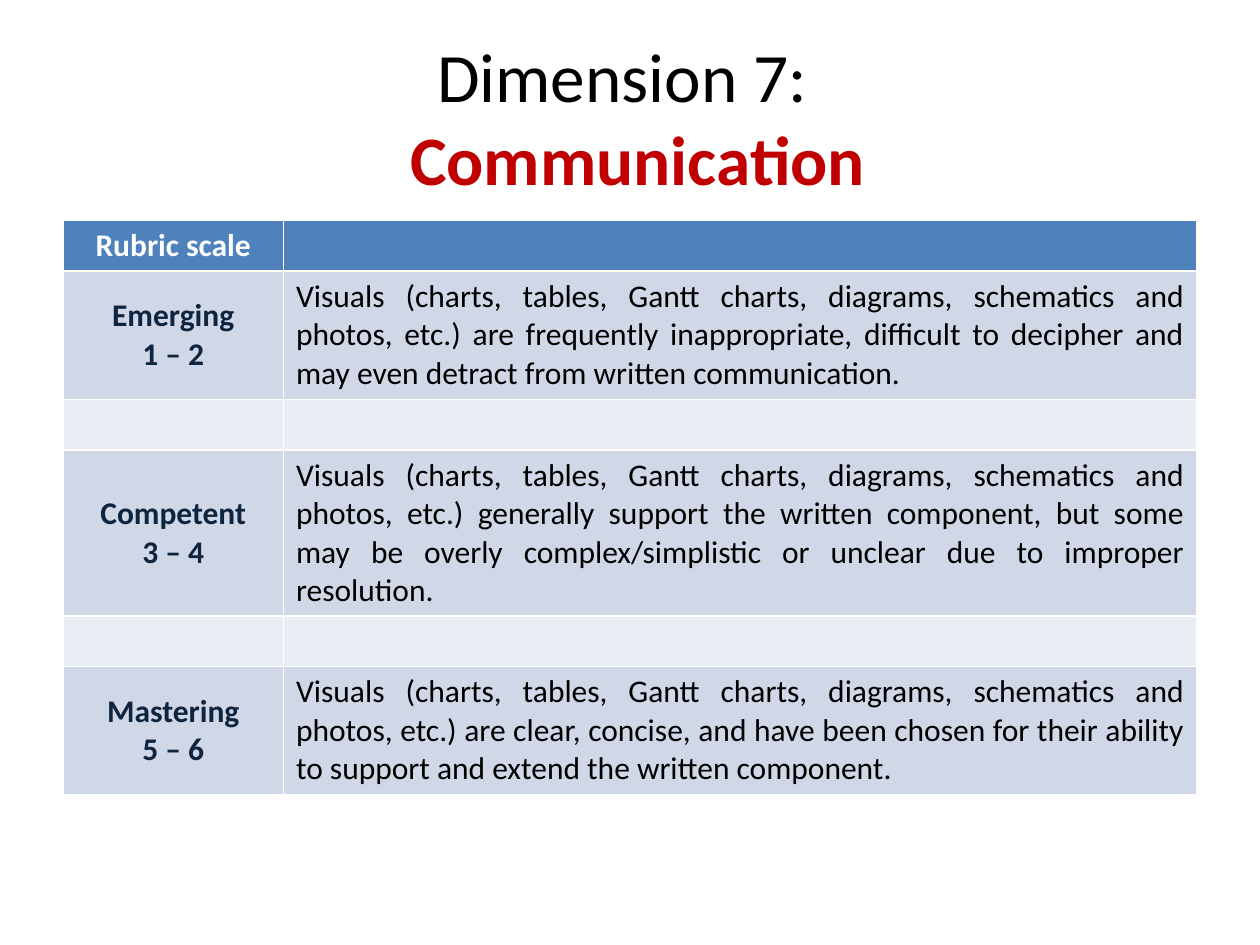
"""Build the communication rubric slide."""
from pptx import Presentation
from pptx.dml.color import RGBColor
from pptx.enum.text import MSO_ANCHOR as Anchor, PP_ALIGN as Align
from pptx.util import Inches, Pt

FONT = "Calibri"
BLACK = RGBColor(0x00, 0x00, 0x00)
WHITE = RGBColor(0xFF, 0xFF, 0xFF)
RED = RGBColor(0xC0, 0x00, 0x00)
NAVY = RGBColor(0x0F, 0x24, 0x3E)
BLUE = RGBColor(0x4F, 0x81, 0xBD)
BAND_DARK = RGBColor(0xD0, 0xD8, 0xE8)
BAND_LIGHT = RGBColor(0xE9, 0xED, 0xF4)

VISUALS = "Visuals (charts, tables, Gantt charts, diagrams, schematics and photos, etc.) "
LEVELS = [
    ("Emerging", "1 – 2", 1.02,
     "are frequently inappropriate, difficult to decipher and may even "
     "detract from written communication."),
    ("Competent", "3 – 4", 1.32,
     "generally support the written component, but some may be overly "
     "complex/simplistic or unclear due to improper resolution."),
    ("Mastering", "5 – 6", 1.02,
     "are clear, concise, and have been chosen for their ability to support "
     "and extend the written component."),
]
COLUMN_WIDTHS = (1.75, 7.25)
THIN_ROW = 0.4


def add_run(p, text, size, color, bold=False):
    r = p.add_run()
    r.text = text
    r.font.name = FONT
    r.font.size = Pt(size)
    r.font.bold = bold
    r.font.color.rgb = color


def add_title(slide):
    box = slide.shapes.add_textbox(Inches(0.5), Inches(0.3), Inches(9), Inches(1.25))
    tf = box.text_frame
    tf.word_wrap = True
    tf.vertical_anchor = Anchor.MIDDLE
    p = tf.paragraphs[0]
    p.alignment = Align.CENTER
    add_run(p, "Dimension 7: ", 39.6, BLACK)
    p.add_line_break()
    add_run(p, " Communication", 39.6, RED, True)


def fill_row(table, row, color, height):
    table.rows[row].height = Inches(height)
    for cell in table.rows[row].cells:
        cell.fill.solid()
        cell.fill.fore_color.rgb = color


def write_cell(cell, lines, color, align, bold, anchor=Anchor.TOP):
    cell.vertical_anchor = anchor
    tf = cell.text_frame
    for i, line in enumerate(lines):
        p = tf.add_paragraph() if i else tf.paragraphs[0]
        p.alignment = align
        add_run(p, line, 18, color, bold)


def add_rubric(slide):
    rows = 2 * len(LEVELS)
    height = len(LEVELS) * THIN_ROW + sum(level[2] for level in LEVELS)
    table = slide.shapes.add_table(rows, len(COLUMN_WIDTHS), Inches(0.5), Inches(1.75),
                                   Inches(sum(COLUMN_WIDTHS)), Inches(height)).table
    for column, width in zip(table.columns, COLUMN_WIDTHS):
        column.width = Inches(width)
    for i, (name, score, level_height, description) in enumerate(LEVELS):
        row = 2 * i + 1
        fill_row(table, row - 1, BAND_LIGHT if i else BLUE, THIN_ROW)
        fill_row(table, row, BAND_DARK, level_height)
        write_cell(table.cell(row, 0), (name, score), NAVY, Align.CENTER, True, Anchor.MIDDLE)
        write_cell(table.cell(row, 1), (VISUALS + description,), BLACK, Align.JUSTIFY, False)
    write_cell(table.cell(0, 0), ("Rubric scale",), WHITE, Align.CENTER, True)


def main():
    prs = Presentation()
    prs.slide_width, prs.slide_height = Inches(10), Inches(7.5)
    slide = prs.slides.add_slide(prs.slide_layouts[6])
    add_title(slide)
    add_rubric(slide)
    prs.save("out.pptx")


if __name__ == "__main__":
    main()
